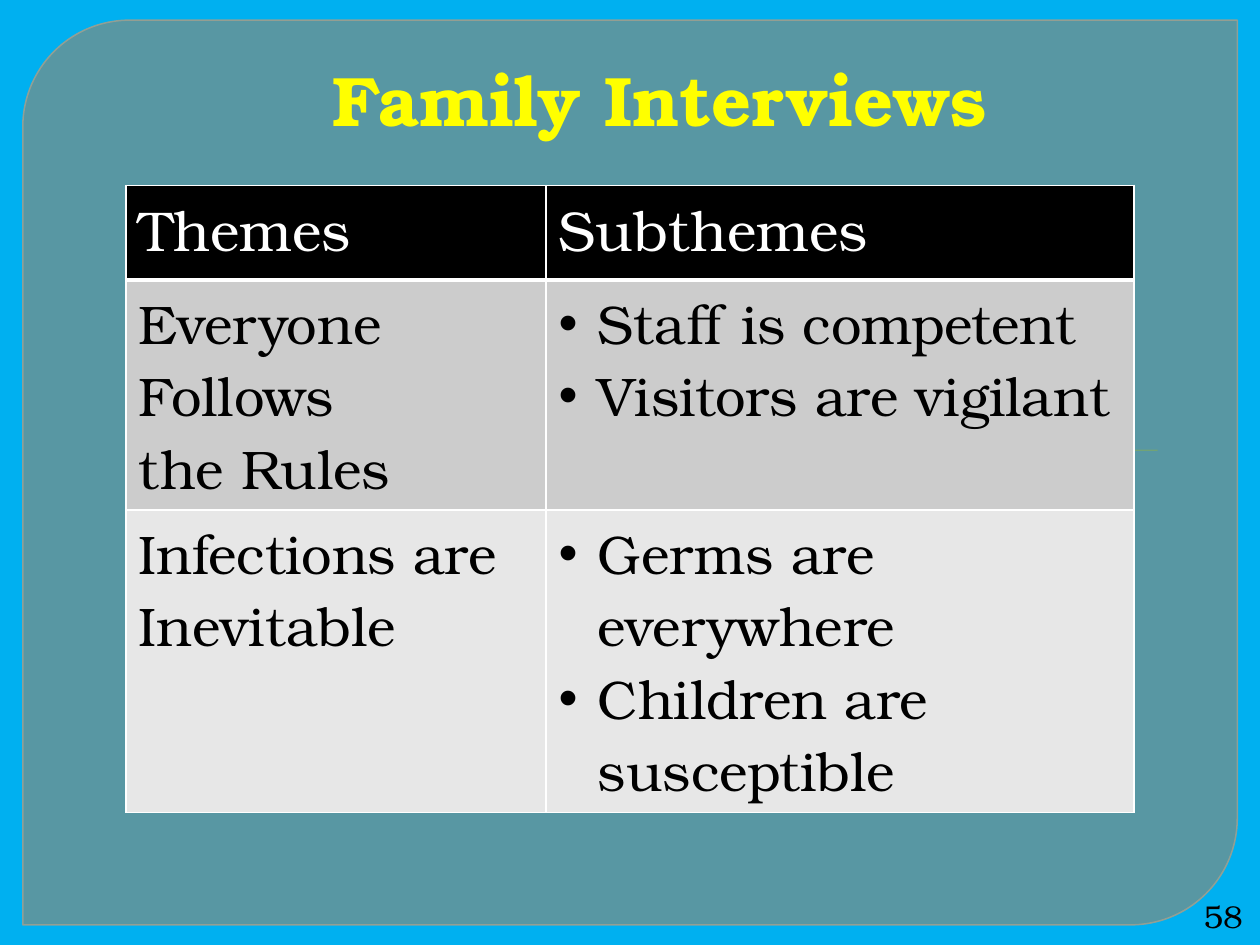
from dataclasses import dataclass

from lxml.etree import SubElement
from pptx import Presentation
from pptx.dml.color import RGBColor
from pptx.enum.shapes import MSO_SHAPE
from pptx.enum.text import MSO_ANCHOR, MSO_AUTO_SIZE, PP_ALIGN
from pptx.oxml.ns import qn
from pptx.util import Pt

FONT = "TeX Gyre Bonum"
BULLET_INDENT = Pt(22.5)


@dataclass
class ThemeRow:
    theme: str
    subthemes: list[str]
    height: float
    fill: str
    text_color: str = "000000"
    size: float = 31
    bulleted: bool = True
    bottom_border: float = 1


ROWS = [
    ThemeRow("Themes", ["Subthemes"], 54, "000000", "FFFFFF", 32, False, 3),
    ThemeRow("Everyone Follows\nthe Rules",
             ["Staff is competent", "Visitors are vigilant"], 120, "CCCCCC"),
    ThemeRow("Infections are Inevitable",
             ["Germs are everywhere", "Children are susceptible"], 146, "E7E7E7"),
]


def paint(fill, color: str) -> None:
    fill.solid()
    fill.fore_color.rgb = RGBColor.from_string(color)


def set_opacity(fill_parent, percent: int) -> None:
    color = fill_parent.find(qn("a:solidFill"))[0]
    SubElement(color, qn("a:alpha"), val=str(percent * 1000))


def style_runs(paragraph, size: float, color: str, bold: bool = False) -> None:
    for run in paragraph.runs:
        run.font.name = FONT
        run.font.size = Pt(size)
        run.font.bold = bold
        paint(run.font.fill, color)


def add_bullet(paragraph) -> None:
    properties = paragraph._p.get_or_add_pPr()
    properties.set("marL", str(BULLET_INDENT))
    properties.set("indent", str(-BULLET_INDENT))
    SubElement(properties, qn("a:buFont"), typeface="Arial")
    SubElement(properties, qn("a:buChar"), char="•")


def set_borders(cell, bottom_width: float) -> None:
    properties = cell._tc.get_or_add_tcPr()
    widths = {"a:lnL": 1, "a:lnR": 1, "a:lnT": 1, "a:lnB": bottom_width}
    for position, (side, width) in enumerate(widths.items()):
        border = SubElement(properties, qn(side), w=str(Pt(width)))
        SubElement(SubElement(border, qn("a:solidFill")), qn("a:srgbClr"), val="FFFFFF")
        properties.insert(position, border)


def fill_cell(cell, lines: list[str], row: ThemeRow, bulleted: bool) -> None:
    paint(cell.fill, row.fill)
    set_borders(cell, row.bottom_border)
    frame = cell.text_frame
    for index, line in enumerate(lines):
        paragraph = frame.add_paragraph() if index else frame.paragraphs[0]
        paragraph.text = line
        style_runs(paragraph, row.size, row.text_color)
        if bulleted:
            add_bullet(paragraph)


def add_backdrop(slide) -> None:
    """Place the rounded panel and the thin rule behind the title."""
    panel = slide.shapes.add_shape(
        MSO_SHAPE.ROUND_2_DIAG_RECTANGLE, Pt(13), Pt(11.5), Pt(694), Pt(517))
    panel.adjustments[0] = 0.118
    panel.adjustments[1] = 0
    paint(panel.fill, "888B7B")
    set_opacity(panel._element.spPr, 65)
    paint(panel.line.fill, "9DA090")
    panel.line.width = Pt(0.87)
    set_opacity(panel._element.spPr.find(qn("a:ln")), 88)

    rule = slide.shapes.add_shape(
        MSO_SHAPE.RECTANGLE, Pt(78.5), Pt(257), Pt(583), Pt(0.7))
    paint(rule.fill, "72A376")
    rule.line.fill.background()

    for shape in (panel, rule):
        shape.shadow.inherit = False
        slide.shapes.title.element.addprevious(shape.element)


def format_title(title) -> None:
    title.left, title.top, title.width, title.height = Pt(168), Pt(18.7), Pt(414), Pt(65)
    frame = title.text_frame
    frame.text = "Family Interviews"
    frame.auto_size = MSO_AUTO_SIZE.NONE
    frame.vertical_anchor = MSO_ANCHOR.BOTTOM
    frame.margin_right = Pt(8)
    heading = frame.paragraphs[0]
    heading.alignment = PP_ALIGN.CENTER
    heading._p.get_or_add_pPr().set("marL", str(Pt(4.3)))
    style_runs(heading, 40, "FFFF00", bold=True)


def add_themes_table(slide) -> None:
    height = sum(row.height for row in ROWS)
    themes = slide.shapes.add_table(
        len(ROWS), 2, Pt(72), Pt(106), Pt(576), Pt(height)).table
    themes.horz_banding = False
    themes.columns[0].width = Pt(240)
    themes.columns[1].width = Pt(336)
    for index, row in enumerate(ROWS):
        themes.rows[index].height = Pt(row.height)
        fill_cell(themes.cell(index, 0), [row.theme], row, False)
        fill_cell(themes.cell(index, 1), row.subthemes, row, row.bulleted)


def add_page_number(slide) -> None:
    number = slide.shapes.add_textbox(Pt(680.4), Pt(512.6), Pt(36.7), Pt(21.6))
    frame = number.text_frame
    frame.word_wrap = True
    frame.vertical_anchor = MSO_ANCHOR.MIDDLE
    frame.text = "58"
    frame.paragraphs[0].alignment = PP_ALIGN.RIGHT
    style_runs(frame.paragraphs[0], 18, "000000")


def main() -> None:
    presentation = Presentation()
    presentation.slide_width, presentation.slide_height = Pt(720), Pt(540)
    slide = presentation.slides.add_slide(presentation.slide_layouts[5])
    paint(slide.background.fill, "00B0F0")
    add_backdrop(slide)
    format_title(slide.shapes.title)
    add_themes_table(slide)
    add_page_number(slide)
    presentation.save("out.pptx")


if __name__ == "__main__":
    main()
